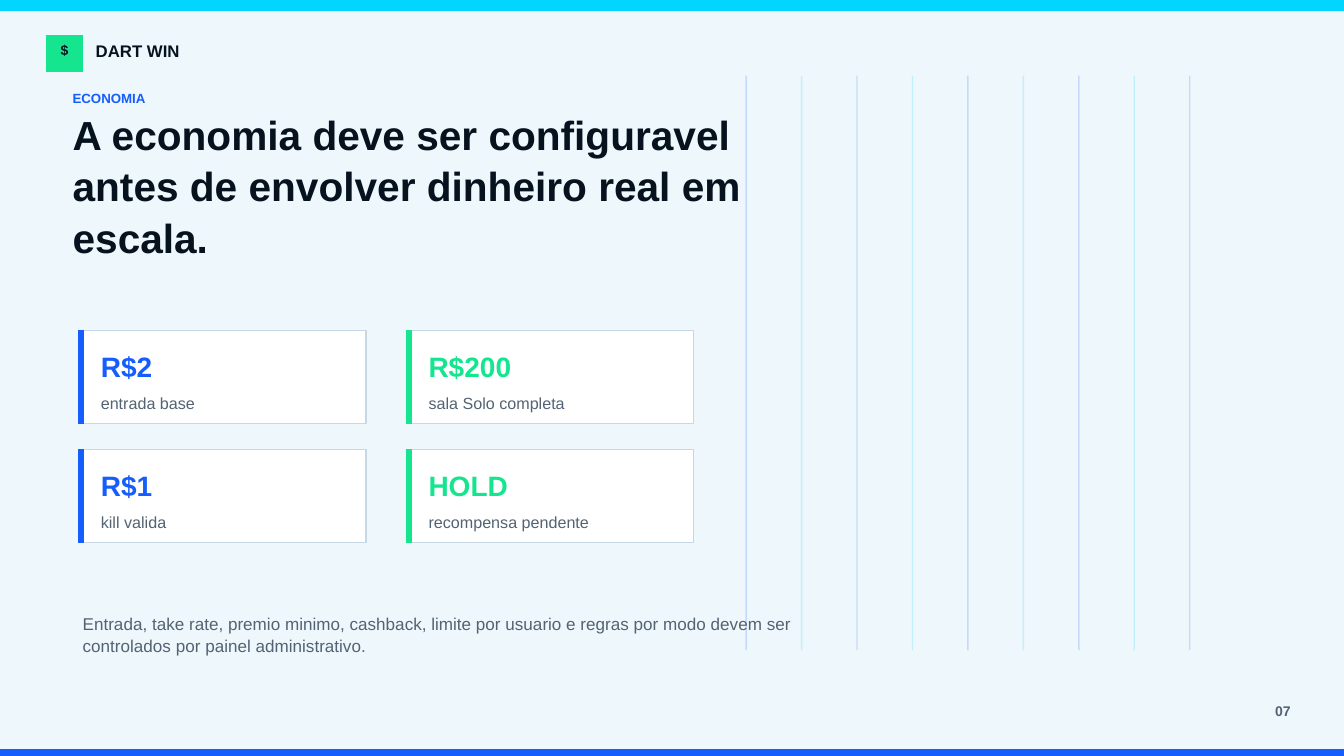
import pptx
import pptx.util
import pptx.dml.color
import pptx.enum.shapes
import pptx.enum.text
import pptx.oxml
import pptx.oxml.ns
from pptx.util import Inches

# Content
BRAND, BRAND_SYMBOL, PAGE = "DART WIN", "$", "07"
SECTION = "ECONOMIA"
TITLE = "A economia deve ser configuravel antes de envolver dinheiro real em escala."
CARD_ROWS = [
    [("R$2", "entrada base"), ("R$200", "sala Solo completa")],
    [("R$1", "kill valida"), ("HOLD", "recompensa pendente")],
]
FOOTNOTE = (
    "Entrada, take rate, premio minimo, cashback, limite por usuario e regras "
    "por modo devem ser controlados por painel administrativo."
)


class Theme:
    font = "Arial"
    paper, white, border = "EEF7FB", "FFFFFF", "C8D7E4"
    cyan, blue, green = "02D5FF", "155DFC", "15E58F"
    ink, muted = "06131F", "536373"
    symbol = {"size": 10, "color": ink, "bold": True}
    brand = {"size": 12, "color": ink, "bold": True}
    page = {"size": 10, "color": muted, "bold": True}
    section = {"size": 9.5, "color": blue, "bold": True}
    title = {"size": 29, "color": ink, "bold": True}
    value = {"size": 20, "bold": True}
    label = {"size": 11.5, "color": muted, "bold": False}
    footnote = {"size": 12.2, "color": muted, "bold": False}


ALIGN = pptx.enum.text.PP_ALIGN
WIDTH, HEIGHT = 13.33, 7.5
CARD_LEFT, CARD_TOP, CARD_WIDTH, CARD_HEIGHT = 0.78, 3.28, 2.85, 0.92
CARD_STEP_X, CARD_STEP_Y = 3.25, 1.18
GRID_LEFT, GRID_STEP, GRID_COUNT = 7.4, 0.55, 9
GRID_TOP, GRID_BOTTOM, GRID_OPACITY = 0.75, 6.45, 18


def rgb(color):
    return pptx.dml.color.RGBColor.from_string(color)


def add_box(slide, left, top, width, height, fill, line=None):
    shape = slide.shapes.add_shape(
        pptx.enum.shapes.MSO_SHAPE.RECTANGLE,
        Inches(left), Inches(top), Inches(width), Inches(height),
    )
    shape.shadow.inherit = False
    shape.fill.solid()
    shape.fill.fore_color.rgb = rgb(fill)
    shape.line.color.rgb = rgb(line or fill)
    shape.line.width = pptx.util.Pt(1)


def write(shape, text, style, align=ALIGN.LEFT, spacing=None):
    frame = shape.text_frame
    frame_format = {
        "word_wrap": True,
        "auto_size": pptx.enum.text.MSO_AUTO_SIZE.NONE,
        "vertical_anchor": pptx.enum.text.MSO_ANCHOR.MIDDLE,
        "margin_left": 0, "margin_right": 0, "margin_top": 0, "margin_bottom": 0,
    }
    for name, setting in frame_format.items():
        setattr(frame, name, setting)
    frame.text = text
    paragraph = frame.paragraphs[0]
    paragraph.alignment = align
    if spacing:
        paragraph.line_spacing = spacing
    font = paragraph.runs[0].font
    font_format = {
        "name": Theme.font,
        "size": pptx.util.Pt(style["size"]),
        "bold": style["bold"],
    }
    for name, setting in font_format.items():
        setattr(font, name, setting)
    font.color.rgb = rgb(style["color"])


def add_text(slide, left, top, width, height, text, style, **options):
    shape = slide.shapes.add_textbox(
        Inches(left), Inches(top), Inches(width), Inches(height)
    )
    write(shape, text, style, **options)


def add_grid_line(slide, x, color):
    connector = slide.shapes.add_connector(
        pptx.enum.shapes.MSO_CONNECTOR.STRAIGHT,
        Inches(x), Inches(GRID_TOP), Inches(x), Inches(GRID_BOTTOM),
    )
    connector.line.color.rgb = rgb(color)
    connector.line.width = pptx.util.Pt(1)
    properties = connector.element.spPr
    color_element = properties.find(".//" + pptx.oxml.ns.qn("a:srgbClr"))
    namespace = pptx.oxml.ns.nsdecls("a")
    color_element.append(
        pptx.oxml.parse_xml(f'<a:alpha {namespace} val="{GRID_OPACITY * 1000}"/>')
    )
    properties.append(pptx.oxml.parse_xml(f"<a:effectLst {namespace}/>"))


def add_card(slide, left, top, value, label, accent):
    add_box(slide, left, top, CARD_WIDTH, CARD_HEIGHT, Theme.white, Theme.border)
    add_box(slide, left, top, 0.05, CARD_HEIGHT, accent)
    value_style = {**Theme.value, "color": accent}
    add_text(slide, left + 0.22, top + 0.18, 2.51, 0.35, value, value_style)
    add_text(slide, left + 0.22, top + 0.62, 2.51, 0.2, label, Theme.label)


def main():
    presentation = pptx.Presentation()
    presentation.slide_width = Inches(WIDTH)
    presentation.slide_height = Inches(HEIGHT)
    slide = presentation.slides.add_slide(presentation.slide_layouts[5])

    # Background, edge bars and vertical grid
    slide.background.fill.solid()
    slide.background.fill.fore_color.rgb = rgb(Theme.paper)
    add_box(slide, 0, 0, WIDTH, 0.1, Theme.cyan)
    add_box(slide, 0, HEIGHT - 0.06, WIDTH, 0.06, Theme.blue)
    for index in range(GRID_COUNT):
        color = (Theme.blue, Theme.cyan)[index % 2]
        add_grid_line(slide, GRID_LEFT + index * GRID_STEP, color)

    # Header and page number
    add_box(slide, 0.46, 0.35, 0.36, 0.36, Theme.green)
    add_text(slide, 0.46, 0.43, 0.36, 0.12, BRAND_SYMBOL, Theme.symbol,
             align=ALIGN.CENTER)
    add_text(slide, 0.95, 0.41, 1.7, 0.18, BRAND, Theme.brand)
    add_text(slide, 12.28, 6.95, 0.52, 0.2, PAGE, Theme.page, align=ALIGN.RIGHT)

    # Section and title
    add_text(slide, 0.72, 0.86, 3.5, 0.22, SECTION, Theme.section)
    title = slide.shapes.title
    place = {"left": 0.72, "top": 1.23, "width": 7.4, "height": 1.2}
    for name, inches in place.items():
        setattr(title, name, Inches(inches))
    write(title, TITLE, Theme.title, spacing=1.05)

    # Value cards, one accent per column
    for row, cards in enumerate(CARD_ROWS):
        for column, (value, label) in enumerate(cards):
            add_card(
                slide,
                CARD_LEFT + column * CARD_STEP_X,
                CARD_TOP + row * CARD_STEP_Y,
                value, label, (Theme.blue, Theme.green)[column],
            )

    # Footnote
    add_text(slide, 0.82, 6.08, 7.1, 0.42, FOOTNOTE, Theme.footnote, spacing=1.05)

    presentation.save("out.pptx")


if __name__ == "__main__":
    main()
